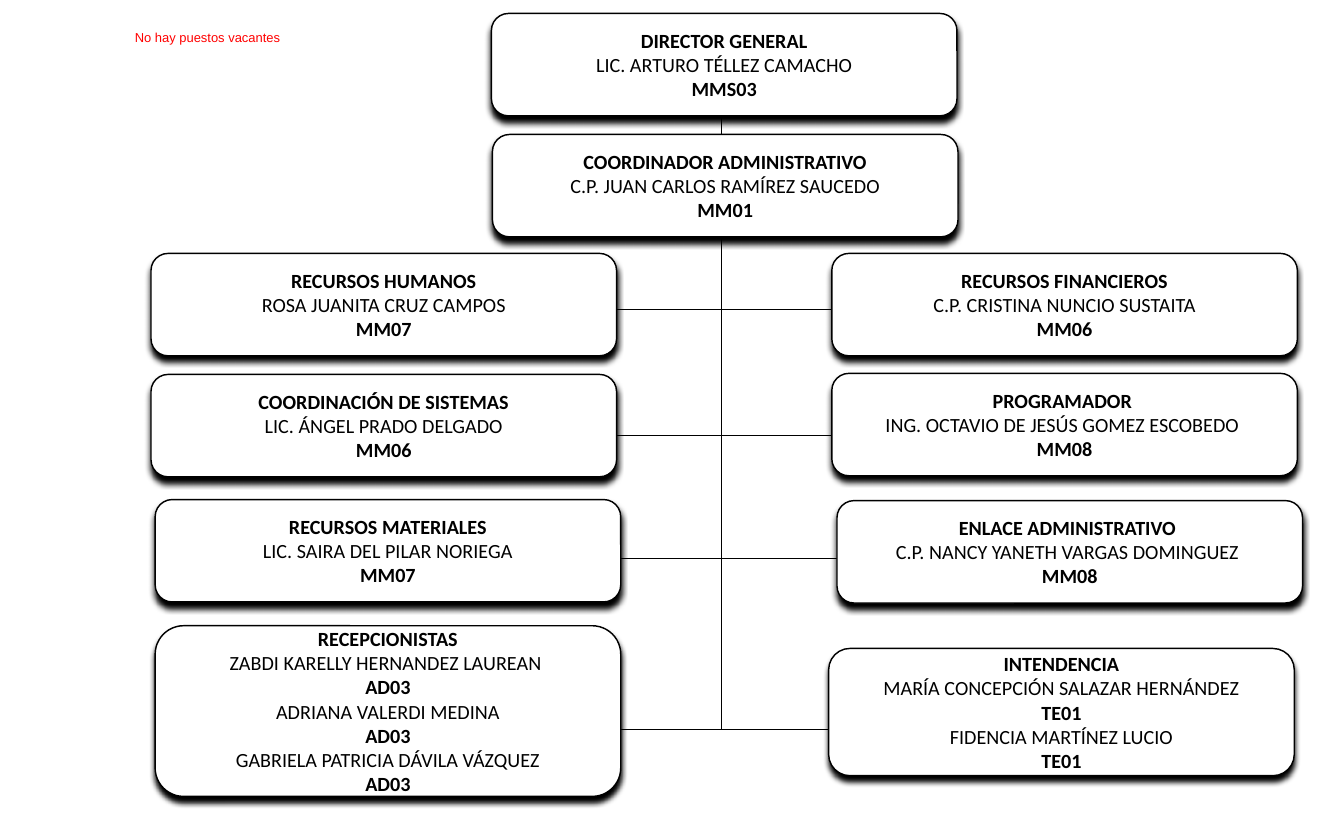
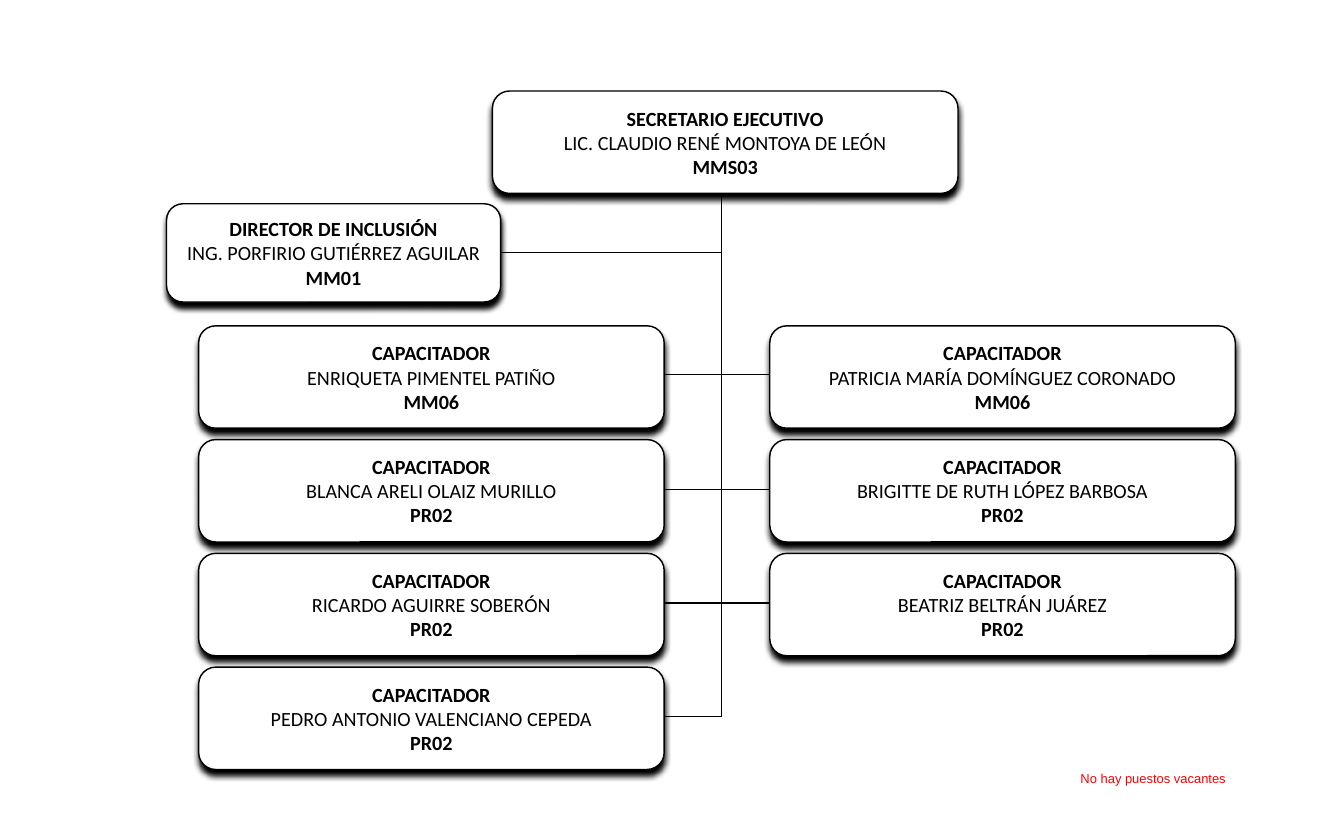
from lxml import etree
from pptx import Presentation
from pptx.dml.color import RGBColor
from pptx.enum.shapes import MSO_CONNECTOR, MSO_SHAPE
from pptx.enum.text import MSO_ANCHOR, PP_ALIGN
from pptx.oxml.ns import qn
from pptx.util import Pt

ROUNDED = MSO_SHAPE.ROUNDED_RECTANGLE
STRAIGHT = MSO_CONNECTOR.STRAIGHT
MIDDLE = MSO_ANCHOR.MIDDLE
CENTER = PP_ALIGN.CENTER

COLORS = {"ink": "000000", "card": "FFFFFF", "note": "FF0000"}
CARD_FONT, NOTE_FONT = "Calibri", "Arial"
EMU_PER_PX = 9144
SLIDE_W, SLIDE_H = 1299, 788
CARD_W, CARD_H = 450, 99
SPINE_X = 697
NOTE_TEXT = "No hay puestos vacantes"

MANAGEMENT_CARDS = [
    (475, 13, CARD_H, ["DIRECTOR GENERAL", "LIC. ARTURO TÉLLEZ CAMACHO", "MMS03"]),
    (476, 130, CARD_H, ["COORDINADOR ADMINISTRATIVO", "C.P. JUAN CARLOS RAMÍREZ SAUCEDO", "MM01"]),
    (146, 245, CARD_H, ["RECURSOS HUMANOS", "ROSA JUANITA CRUZ CAMPOS", "MM07"]),
    (804, 245, CARD_H, ["RECURSOS FINANCIEROS", "C.P. CRISTINA NUNCIO SUSTAITA", "MM06"]),
    (146, 362, CARD_H, ["COORDINACIÓN DE SISTEMAS", "LIC. ÁNGEL PRADO DELGADO", "MM06"]),
    (804, 361, CARD_H, ["PROGRAMADOR ", "ING. OCTAVIO DE JESÚS GOMEZ ESCOBEDO ", "MM08"]),
    (150, 483, CARD_H, ["RECURSOS MATERIALES", "LIC. SAIRA DEL PILAR NORIEGA", "MM07"]),
    (809, 484, CARD_H, ["ENLACE ADMINISTRATIVO ", "C.P. NANCY YANETH VARGAS DOMINGUEZ ", "MM08"]),
    (150, 605, 165, ["RECEPCIONISTAS", "ZABDI KARELLY HERNANDEZ LAUREAN ", "AD03",
                     "ADRIANA VALERDI MEDINA", "AD03",
                     "GABRIELA PATRICIA DÁVILA VÁZQUEZ", "AD03"]),
    (801, 627, 123, ["INTENDENCIA", "MARÍA CONCEPCIÓN SALAZAR HERNÁNDEZ", "TE01",
                     "FIDENCIA MARTÍNEZ LUCIO", "TE01"]),
]
MANAGEMENT_BRANCHES = [(579, 809, 299), (579, 809, 421), (579, 809, 540), (574, 804, 705)]

TRAINER_ROWS = [
    [("ENRIQUETA PIMENTEL PATIÑO", "MM06"), ("PATRICIA MARÍA DOMÍNGUEZ CORONADO", "MM06")],
    [("BLANCA ARELI OLAIZ MURILLO", "PR02"), ("BRIGITTE DE RUTH LÓPEZ BARBOSA", "PR02")],
    [("RICARDO AGUIRRE SOBERÓN", "PR02"), ("BEATRIZ BELTRÁN JUÁREZ", "PR02")],
    [("PEDRO ANTONIO VALENCIANO CEPEDA", "PR02")],
]
TRAINER_COLUMNS = (192, 744)
TRAINER_TOP, TRAINER_PITCH = 315, 110
SECRETARIAT_BRANCHES = [(475, SPINE_X, 244), (578, 799, 362), (594, 816, 473),
                        (594, 816, 583), (594, SPINE_X, 693)]


def px(length):
    """Turn px into EMU."""
    return length * EMU_PER_PX


def rgb(name):
    """Look up a colour of the palette."""
    return RGBColor.from_string(COLORS[name])


def add_run(paragraph, text, font, size, color, bold=False):
    """Add one formatted run to a centred paragraph."""
    paragraph.alignment = CENTER
    run = paragraph.add_run()
    run.text = text
    run.font.name = font
    run.font.size = Pt(size)
    run.font.bold = bold
    run.font.color.rgb = rgb(color)


def drop_shadow(shape):
    """Give a shape a solid shadow just below it."""
    shape.shadow.inherit = False
    effects = shape._element.spPr.find(qn("a:effectLst"))
    shadow = etree.SubElement(effects, qn("a:outerShdw"), blurRad=str(Pt(4)),
                              dist=str(Pt(4)), dir="5400000", rotWithShape="0")
    etree.SubElement(shadow, qn("a:srgbClr"), val=COLORS["ink"])


def add_card(slide, left, top, lines, width=CARD_W, height=CARD_H):
    """Add a post's card: bold title, then names alternating with bold grades."""
    card = slide.shapes.add_shape(ROUNDED, px(left), px(top), px(width), px(height))
    card.fill.solid()
    card.fill.fore_color.rgb = rgb("card")
    card.line.color.rgb = rgb("ink")
    card.line.width = Pt(1)
    drop_shadow(card)
    frame = card.text_frame
    frame.word_wrap = False
    frame.vertical_anchor = MIDDLE
    frame.margin_left = frame.margin_right = px(17)
    frame.margin_top = frame.margin_bottom = px(9)
    for index, text in enumerate(lines):
        paragraph = frame.add_paragraph() if index else frame.paragraphs[0]
        add_run(paragraph, text, CARD_FONT, 14, "ink", bold=index % 2 == 0)


def add_line(slide, x1, y1, x2, y2):
    """Add a thin straight line between two points."""
    line = slide.shapes.add_connector(STRAIGHT, px(x1), px(y1), px(x2), px(y2))
    line.line.color.rgb = rgb("ink")
    line.line.width = Pt(0.75)
    etree.SubElement(line._element.spPr, qn("a:effectLst"))


def add_tree(slide, top, bottom, branches):
    """Add the vertical spine and the branches that cross or meet it."""
    add_line(slide, SPINE_X, top, SPINE_X, bottom)
    for start, end, y in branches:
        add_line(slide, start, y, end, y)


def add_note(slide, left, top):
    """Add the red remark on vacancies."""
    note = slide.shapes.add_textbox(px(left), px(top), px(331), px(25))
    note.text_frame.word_wrap = True
    add_run(note.text_frame.paragraphs[0], NOTE_TEXT, NOTE_FONT, 9, "note")


def build_management(slide):
    """Draw the chart of the general management."""
    add_tree(slide, 112, 706, MANAGEMENT_BRANCHES)
    for left, top, height, lines in MANAGEMENT_CARDS:
        add_card(slide, left, top, lines, height=height)
    add_note(slide, 35, 24)


def build_secretariat(slide):
    """Draw the chart of the executive secretariat."""
    add_tree(slide, 189, 693, SECRETARIAT_BRANCHES)
    add_card(slide, 476, 88, ["SECRETARIO EJECUTIVO", "LIC. CLAUDIO RENÉ MONTOYA DE LEÓN", "MMS03"])
    add_card(slide, 161, 197,
             ["DIRECTOR DE INCLUSIÓN", "ING. PORFIRIO GUTIÉRREZ AGUILAR", "MM01"],
             width=323, height=95)
    for row, trainers in enumerate(TRAINER_ROWS):
        top = TRAINER_TOP + row * TRAINER_PITCH
        for left, (name, grade) in zip(TRAINER_COLUMNS, trainers):
            add_card(slide, left, top, ["CAPACITADOR", name, grade])
    add_note(slide, 949, 740)


def main():
    """Build both charts and save them."""
    deck = Presentation()
    deck.slide_width, deck.slide_height = px(SLIDE_W), px(SLIDE_H)
    blank = deck.slide_layouts[6]
    for build in (build_management, build_secretariat):
        build(deck.slides.add_slide(blank))
    deck.save("out.pptx")


if __name__ == "__main__":
    main()
